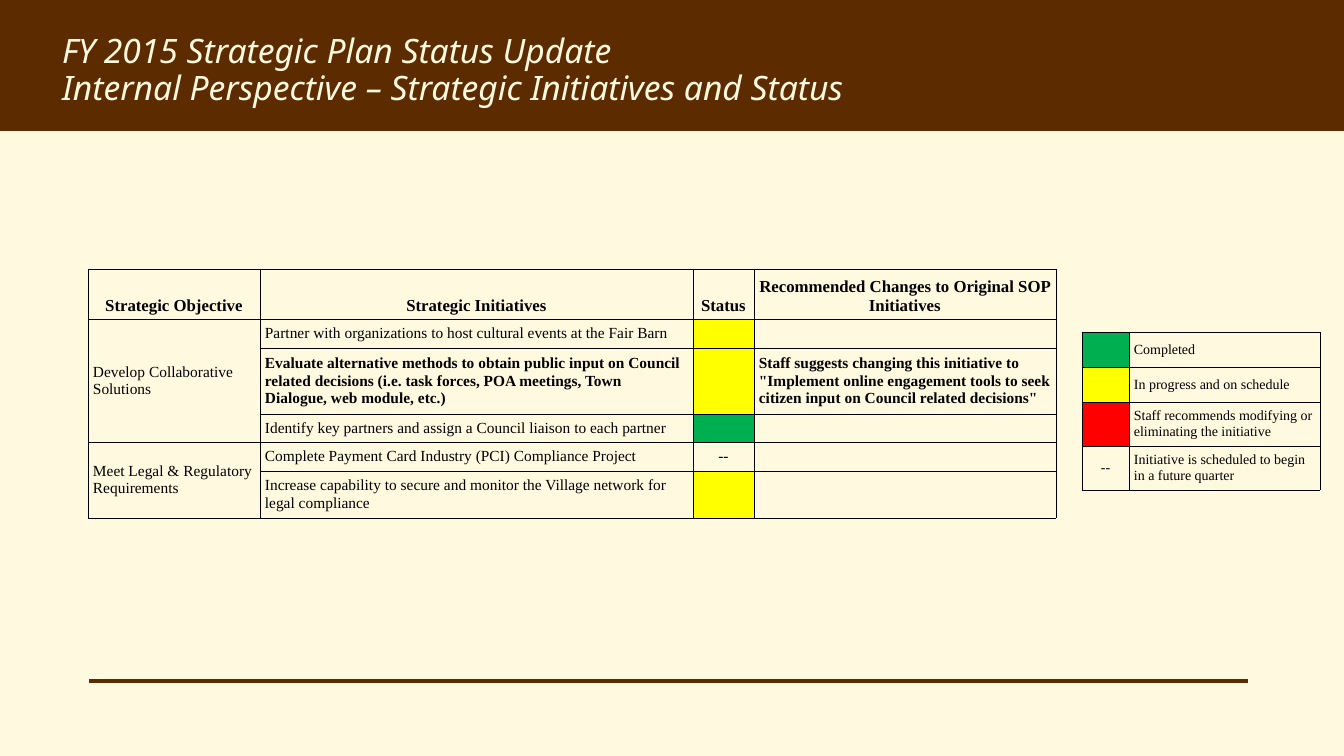
from lxml.etree import SubElement
from pptx import Presentation
from pptx.dml.color import RGBColor
from pptx.enum.shapes import MSO_CONNECTOR, MSO_SHAPE
from pptx.enum.text import MSO_ANCHOR, MSO_AUTO_SIZE, PP_ALIGN
from pptx.oxml import parse_xml
from pptx.oxml.ns import nsdecls, qn
from pptx.util import Emu, Pt

PX = 914400 / 100.8
BROWN, CREAM, BLACK = "5D2B00", "FFF9DF", "000000"
GREEN, YELLOW, RED = "00B050", "FFFF00", "FF0000"
color = RGBColor.from_string


def px(*lengths):
    return [Emu(round(length * PX)) for length in lengths]


def add_grid(left, top, widths, heights, rows, size, header=False):
    """Add a bordered table; a cell holding a hex colour becomes a swatch."""
    frame = slide.shapes.add_table(
        len(heights), len(widths), *px(left, top, sum(widths), sum(heights)))
    table = frame.table
    table.first_row = table.horz_banding = False
    for column, width in zip(table.columns, px(*widths)):
        column.width = width
    for row, height in zip(table.rows, px(*heights)):
        row.height = height
    for row_index, texts in enumerate(rows):
        is_header = header and row_index == 0
        for column_index, text in enumerate(texts):
            cell = table.cell(row_index, column_index)
            cell.margin_left = cell.margin_right = px(5)[0]
            cell.margin_top = cell.margin_bottom = px(4)[0]
            cell.vertical_anchor = MSO_ANCHOR.BOTTOM if is_header else MSO_ANCHOR.MIDDLE
            properties = cell._tc.get_or_add_tcPr()
            for side in ("lnL", "lnR", "lnT", "lnB"):
                properties.append(parse_xml(
                    f'<a:{side} {nsdecls("a")} w="6350"><a:solidFill>'
                    f'<a:srgbClr val="{BLACK}"/></a:solidFill></a:{side}>'))
            paragraph = cell.text_frame.paragraphs[0]
            if text in (GREEN, YELLOW, RED):
                cell.fill.solid()
                cell.fill.fore_color.rgb = color(text)
                text = ""
            else:
                cell.fill.background()
            if not text:
                SubElement(paragraph._p, qn("a:endParaRPr"), sz=str(size * 100))
                continue
            if is_header or text == "--":
                paragraph.alignment = PP_ALIGN.CENTER
            run = paragraph.add_run()
            run.text = text
            font_format = {"name": "Times New Roman", "size": Pt(12 if is_header else size),
                           "bold": is_header or text in CHANGED}
            for name, value in font_format.items():
                setattr(run.font, name, value)
            run.font.color.rgb = color(BLACK)
    return table


presentation = Presentation()
presentation.slide_width, presentation.slide_height = px(1344, 756)
slide = presentation.slides.add_slide(presentation.slide_layouts[5])
slide.background.fill.solid()
slide.background.fill.fore_color.rgb = color(CREAM)

# Header band, behind the title
band = slide.shapes.add_shape(MSO_SHAPE.RECTANGLE, *px(0, 0, 1344, 131))
band.shadow.inherit = False
band.fill.solid()
band.fill.fore_color.rgb = color(BROWN)
band.line.fill.background()
slide.shapes._spTree.insert(2, band._element)

title = slide.shapes.title
title.left, title.top, title.width, title.height = px(52, 25, 1239, 92)
title_frame = title.text_frame
title_frame.text = ("FY 2015 Strategic Plan Status Update\n"
                    "Internal Perspective – Strategic Initiatives and Status")
title_frame.auto_size = MSO_AUTO_SIZE.NONE
title_frame.vertical_anchor = MSO_ANCHOR.MIDDLE
for paragraph in title_frame.paragraphs:
    paragraph.alignment = PP_ALIGN.LEFT
    paragraph.line_spacing = 0.9
    for name, value in {"name": "Noto Sans", "size": Pt(24), "italic": True}.items():
        setattr(paragraph.font, name, value)
    paragraph.font.color.rgb = color(CREAM)

footer_line = slide.shapes.add_connector(MSO_CONNECTOR.STRAIGHT, *px(89, 681, 1248, 681))
footer_line.line.color.rgb = color(BROWN)
footer_line.line.width = Pt(3)
SubElement(footer_line._element.spPr, qn("a:effectLst"))

# Status legend
CHANGED = (
    "Evaluate alternative methods to obtain public input on Council related decisions "
    "(i.e. task forces, POA meetings, Town Dialogue, web module, etc.)",
    'Staff suggests changing this initiative to "Implement online engagement tools '
    'to seek citizen input on Council related decisions"',
)
legend = [
    (GREEN, "Completed"),
    (YELLOW, "In progress and on schedule"),
    (RED, "Staff recommends modifying or eliminating the initiative"),
    ("--", "Initiative is scheduled to begin in a future quarter"),
]
add_grid(1082, 332, [47, 191], [35, 35, 44, 44], legend, 10)

# Initiatives by objective
initiatives = [
    ("Strategic Objective", "Strategic Initiatives", "Status",
     "Recommended Changes to Original SOP Initiatives"),
    ("Develop Collaborative Solutions",
     "Partner with organizations to host cultural events at the Fair Barn", YELLOW, ""),
    ("", CHANGED[0], YELLOW, CHANGED[1]),
    ("", "Identify key partners and assign a Council liaison to each partner", GREEN, ""),
    ("Meet Legal & Regulatory Requirements",
     "Complete Payment Card Industry (PCI) Compliance Project", "--", ""),
    ("", "Increase capability to secure and monitor the Village network for legal compliance",
     YELLOW, ""),
]
status_table = add_grid(88, 269, [172, 433, 61, 302], [50, 29, 66, 28, 29, 47],
                        initiatives, 11, header=True)
for first_row, last_row in ((1, 3), (4, 5)):
    status_table.cell(first_row, 0).merge(status_table.cell(last_row, 0))

presentation.save("out.pptx")
